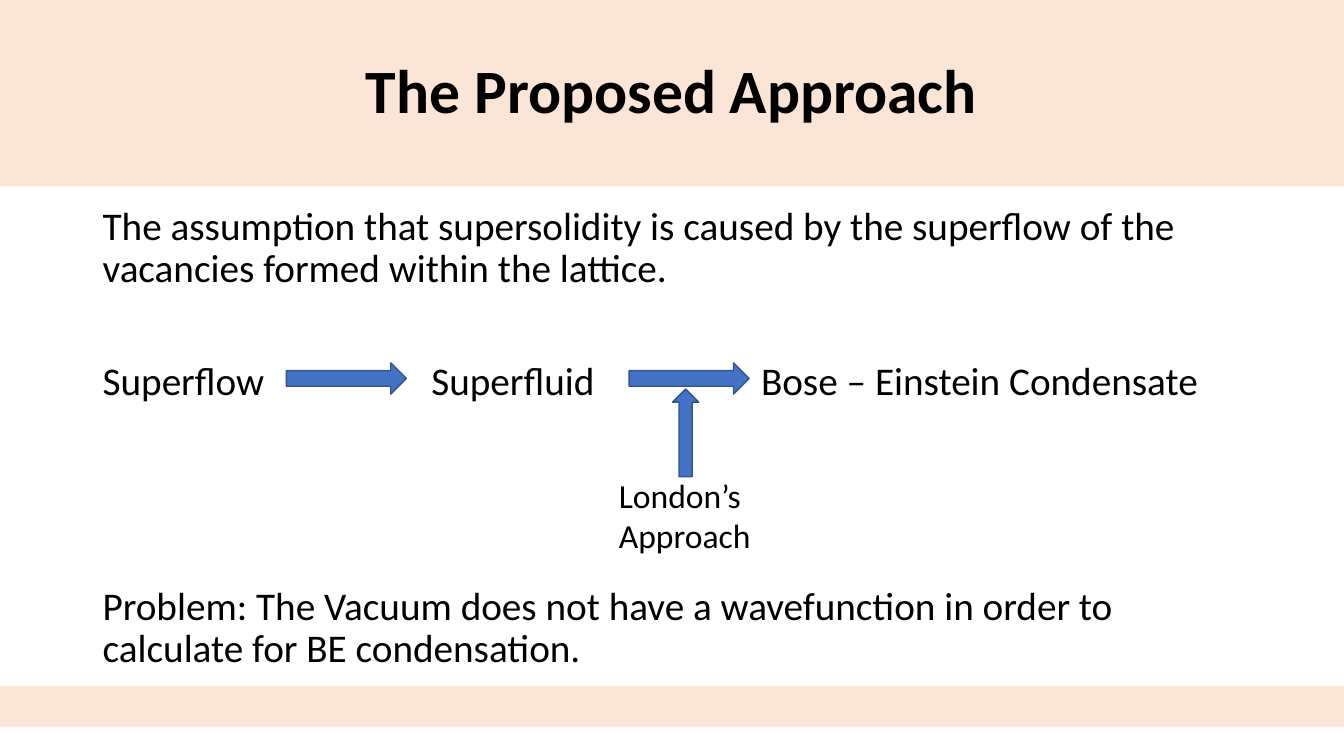
from pptx import Presentation
from pptx.dml.color import RGBColor
from pptx.enum.shapes import MSO_SHAPE as SHAPE
from pptx.enum.text import MSO_ANCHOR as ANCHOR, PP_ALIGN as ALIGN
from pptx.util import Inches, Pt

# Content
TITLE = "The Proposed Approach"
ASSUMPTION = ("The assumption that supersolidity is caused by the superflow of the "
              "vacancies formed within the lattice.")
PROBLEM = ("Problem: The Vacuum does not have a wavefunction in order to "
           "calculate for BE condensation.")
CHAIN = [("Superflow", 0.92, 1.9), ("Superfluid", 4.18, 1.95),
         ("Bose – Einstein Condensate", 7.45, 4.97)]  # text, left, width
CHAIN_ARROWS = [2.84, 6.24]  # lefts
LONDON = "London’s Approach"

# Style
FONT = "Calibri"
PEACH, BLUE, BLUE_EDGE, BLACK = "FBE5D6", "4472C4", "325491", "000000"
SLIDE_W, SLIDE_H = 13.33, 7.5
BODY_X, BODY_W = 0.92, 11.5
ASSUMPTION_Y, CHAIN_Y, PROBLEM_Y = 2, 3.54, 5.77

prs = Presentation()
prs.slide_width, prs.slide_height = Inches(SLIDE_W), Inches(SLIDE_H)
s = prs.slides.add_slide(prs.slide_layouts[6])


def color(hex_value):
    return RGBColor.from_string(hex_value)


def write(sp, text, size, spacing=0.9, bold=False, align=ALIGN.LEFT, anchor=ANCHOR.TOP):
    tf = sp.text_frame
    tf.word_wrap = True
    tf.vertical_anchor = anchor
    tf.text = text
    p = tf.paragraphs[0]
    p.alignment, p.line_spacing = align, spacing
    font = p.runs[0].font
    font.name, font.size, font.bold = FONT, Pt(size), bold
    font.color.rgb = color(BLACK)


def add_text(text, x, y, w, h, size=28, spacing=0.9):
    box = s.shapes.add_textbox(Inches(x), Inches(y), Inches(w), Inches(h))
    write(box, text, size, spacing)


def add_block(kind, x, y, w, h, fill, edge=None):
    sp = s.shapes.add_shape(kind, Inches(x), Inches(y), Inches(w), Inches(h))
    sp.shadow.inherit = False
    sp.fill.solid()
    sp.fill.fore_color.rgb = color(fill)
    if edge:
        sp.line.color.rgb = color(edge)
        sp.line.width = Pt(1)
    else:
        sp.line.fill.background()
    return sp


# Title band and footer band
band = add_block(SHAPE.RECTANGLE, 0, 0, SLIDE_W, 1.85, PEACH)
write(band, TITLE, 44, bold=True, align=ALIGN.CENTER, anchor=ANCHOR.MIDDLE)
add_block(SHAPE.RECTANGLE, 0, 6.81, SLIDE_W, 0.4, PEACH)

# Statements
for text, y in [(ASSUMPTION, ASSUMPTION_Y), (PROBLEM, PROBLEM_Y)]:
    add_text(text, BODY_X, y, BODY_W, 0.95)

# Chain of ideas
for text, x, w in CHAIN:
    add_text(text, x, CHAIN_Y, w, 0.53)
for x in CHAIN_ARROWS:
    add_block(SHAPE.RIGHT_ARROW, x, 3.6, 1.19, 0.31, BLUE, BLUE_EDGE)

# London's approach feeding the second step
add_block(SHAPE.UP_ARROW, 6.67, 3.86, 0.26, 0.87, BLUE, BLUE_EDGE)
add_text(LONDON, 6.04, 4.66, 1.56, 0.91, size=24, spacing=1.0)

prs.save("out.pptx")
